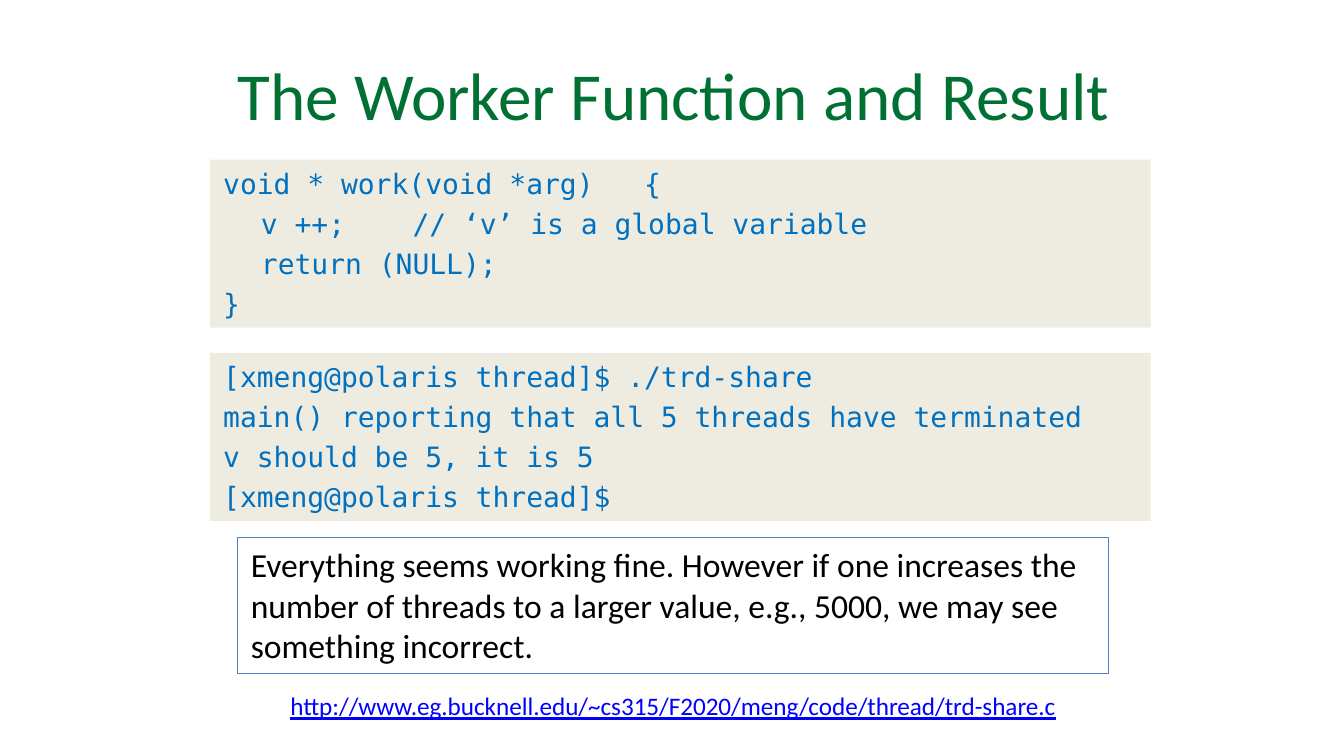
from pptx import Presentation
from pptx.dml.color import RGBColor
from pptx.enum import shapes, text
from pptx.util import Pt


def color(code):
    return RGBColor.from_string(code)


class Deck:
    sans, mono = "Calibri", "DejaVu Sans Mono"
    green, blue, link = "007033", "0070C0", "0000FF"
    sand, edge, ink = "EEECE1", "4F81BD", "000000"

    def __init__(self, slide):
        self.slide = slide

    def fill_text(self, shape, lines, size, font, tint, wrap=True):
        frame = shape.text_frame
        frame.word_wrap = wrap
        frame.vertical_anchor = text.MSO_ANCHOR.TOP
        for i, line in enumerate(lines):
            para = frame.paragraphs[0] if i == 0 else frame.add_paragraph()
            para.text = line
            para.alignment = text.PP_ALIGN.LEFT
            para.font.size = Pt(size)
            para.font.name = font
            para.font.color.rgb = color(tint)
        return frame

    def label(self, box, line, size, tint, wrap=True):
        shape = self.slide.shapes.add_textbox(*map(Pt, box))
        return self.fill_text(shape, [line], size, self.sans, tint, wrap)

    def title(self, box, line):
        frame = self.label(box, line, 36, self.green)
        frame.vertical_anchor = text.MSO_ANCHOR.MIDDLE
        frame.paragraphs[0].alignment = text.PP_ALIGN.CENTER

    def url(self, box, line):
        frame = self.label(box, line, 13.5, self.link, False)
        frame.paragraphs[0].font.underline = True

    def panel(self, box):
        shape = self.slide.shapes.add_shape(
            shapes.MSO_SHAPE.RECTANGLE, *map(Pt, box))
        shape.shadow.inherit = False
        shape.fill.background()
        shape.line.fill.background()
        return shape

    def code(self, box, lines):
        shape = self.panel(box)
        shape.fill.solid()
        shape.fill.fore_color.rgb = color(self.sand)
        frame = self.fill_text(shape, lines, 15, self.mono, self.blue)
        for i, para in enumerate(frame.paragraphs):
            # Hanging indent: a leading tab stops at the margin
            props = para._p.get_or_add_pPr()
            props.set("marL", str(Pt(20.25)))
            props.set("indent", str(Pt(-20.25)))
            para.space_before = Pt(3.5 if i else 0)

    def note(self, box, lines):
        shape = self.panel(box)
        shape.line.color.rgb = color(self.edge)
        shape.line.width = Pt(0.75)
        self.fill_text(shape, lines, 18, self.sans, self.ink, False)


def main():
    prs = Presentation()
    prs.slide_width, prs.slide_height = Pt(720), Pt(405)
    deck = Deck(prs.slides.add_slide(prs.slide_layouts[6]))

    # Heading
    deck.title((37, 16.5, 648, 67.5), "The Worker Function and Result")

    # Code and its output
    blocks = [
        ["void * work(void *arg)   {",
         "\tv ++;    // ‘v’ is a global variable",
         "\treturn (NULL);",
         "}"],
        ["[xmeng@polaris thread]$ ./trd-share",
         "main() reporting that all 5 threads have terminated",
         "v should be 5, it is 5",
         "[xmeng@polaris thread]$"],
    ]
    for i, lines in enumerate(blocks):
        deck.code((112.5, 85.5 + 103.5 * i, 504, 90), lines)

    # Remark
    deck.note((127.25, 288, 466.5, 72.75), [
        "Everything seems working fine. However if one increases the",
        "number of threads to a larger value, e.g., 5000, we may see",
        "something incorrect.",
    ])

    # Source address
    deck.url((148.5, 366.5, 432, 40),
             "http://www.eg.bucknell.edu/~cs315/F2020/meng/code/thread/trd-share.c")

    prs.save("out.pptx")


if __name__ == "__main__":
    main()
